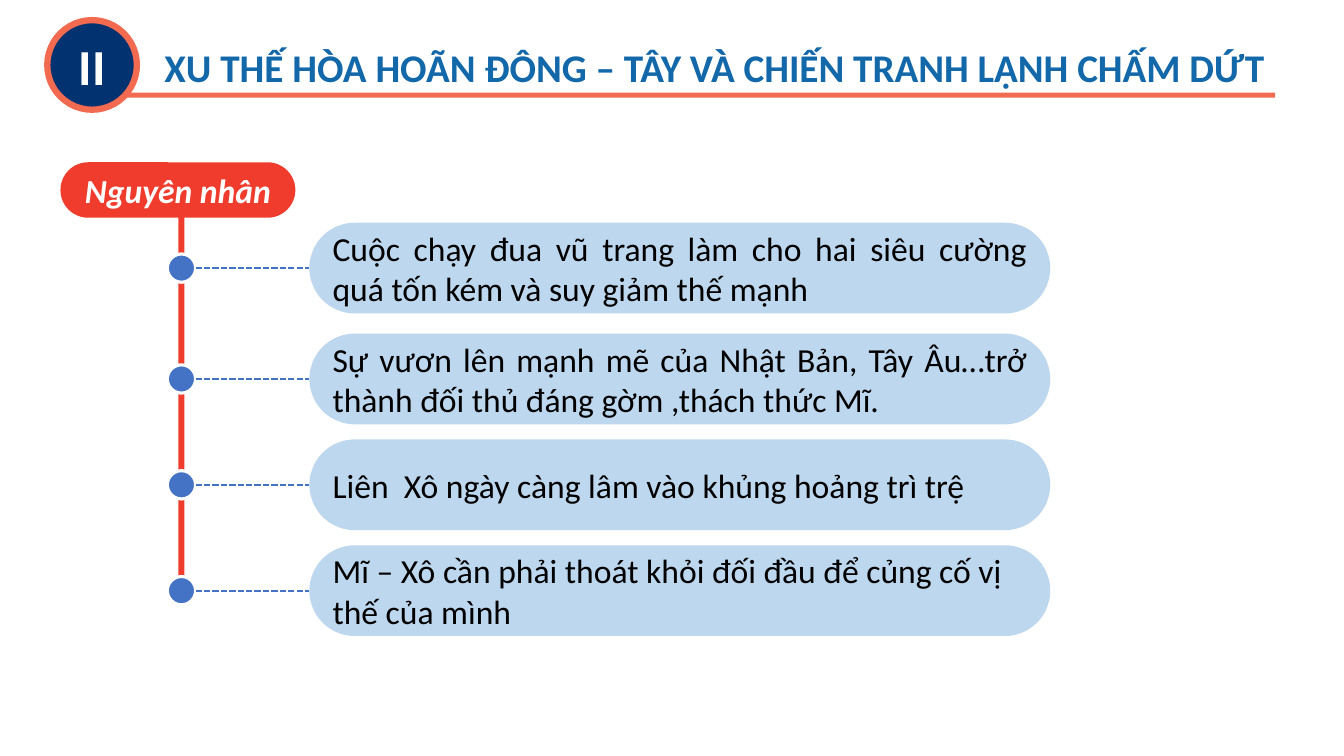
from lxml import etree
from pptx import Presentation
from pptx.dml.color import RGBColor
from pptx.enum.dml import MSO_LINE
from pptx.enum.shapes import MSO_CONNECTOR, MSO_SHAPE
from pptx.enum.text import MSO_ANCHOR, MSO_AUTO_SIZE, PP_ALIGN
from pptx.oxml.ns import qn
from pptx.util import Pt

OVAL, RECT, PILL = MSO_SHAPE.OVAL, MSO_SHAPE.RECTANGLE, MSO_SHAPE.ROUNDED_RECTANGLE
LEFT, CENTER, JUSTIFY = PP_ALIGN.LEFT, PP_ALIGN.CENTER, PP_ALIGN.JUSTIFY
LEFT_SIDE = 1
FONT = "Calibri"
COLORS = {
    "title": "1368AA", "navy": "033270", "coral": "F26A4F", "red": "EF3C2D",
    "pale": "BDD7EE", "blue": "4472C4", "white": "FFFFFF", "black": "000000",
}

# Each cause: top of its pill, alignment, wording
CAUSES = [
    (159.1, JUSTIFY, "Cuộc chạy đua vũ trang làm cho hai siêu cường quá tốn kém và suy giảm thế mạnh"),
    (238.3, JUSTIFY, "Sự vươn lên mạnh mẽ của Nhật Bản, Tây Âu…trở thành đối thủ đáng gờm ,thách thức Mĩ."),
    (313.9, JUSTIFY, "Liên  Xô ngày càng lâm vào khủng hoảng trì trệ"),
    (389.5, LEFT, "Mĩ – Xô cần phải thoát khỏi đối đầu để củng cố vị thế của mình"),
]
CAUSE_LEFT, CAUSE_WIDTH, CAUSE_HEIGHT = 221, 529.2, 64.8
DOT_LEFT, DOT_SIZE = 119.5, 20.2


def rgb(color):
    return RGBColor.from_string(COLORS[color])


def write(shape, text, size=24, color="black", align=CENTER, bold=False,
          italic=False, anchor=MSO_ANCHOR.MIDDLE):
    frame = shape.text_frame
    frame.word_wrap = True
    frame.vertical_anchor = anchor
    paragraph = frame.paragraphs[0]
    paragraph.alignment = align
    run = paragraph.add_run()
    run.text = text
    run.font.name = FONT
    run.font.size = Pt(size)
    run.font.bold = bold
    run.font.italic = italic
    run.font.color.rgb = rgb(color)


def add_block(slide, kind, left, top, width, height, fill, outline=None, weight=0):
    block = slide.shapes.add_shape(kind, Pt(left), Pt(top), Pt(width), Pt(height))
    block.shadow.inherit = False
    block.fill.solid()
    block.fill.fore_color.rgb = rgb(fill)
    if outline:
        block.line.color.rgb = rgb(outline)
        block.line.width = Pt(weight)
    else:
        block.line.fill.background()
    if kind == PILL:
        block.adjustments[0] = 0.5
    return block


def add_branch(slide, start_x, y, cause):
    branch = slide.shapes.add_connector(
        MSO_CONNECTOR.STRAIGHT, Pt(start_x), Pt(y), Pt(CAUSE_LEFT), Pt(y))
    branch.end_connect(cause, LEFT_SIDE)
    branch.line.color.rgb = rgb("blue")
    branch.line.width = Pt(1.5)
    branch.line.dash_style = MSO_LINE.SQUARE_DOT
    etree.SubElement(branch._element.spPr, qn("a:effectLst"))


def add_header(slide):
    title = slide.shapes.add_textbox(Pt(103), Pt(27.4), Pt(814.3), Pt(41.2))
    write(title, "XU THẾ HÒA HOÃN ĐÔNG – TÂY VÀ CHIẾN TRANH LẠNH CHẤM DỨT",
          size=28, color="title", bold=True, anchor=MSO_ANCHOR.TOP)
    title.text_frame.auto_size = MSO_AUTO_SIZE.SHAPE_TO_FIT_TEXT
    badge = add_block(slide, OVAL, 33.8, 14.4, 64, 64, "navy", "coral", 4.5)
    write(badge, "II", size=36, color="white", bold=True)
    add_block(slide, RECT, 88.6, 66.2, 822.2, 3.6, "coral")


def add_causes(slide):
    heading = add_block(slide, PILL, 43.2, 115.9, 167.8, 39.6, "red")
    write(heading, "Nguyên nhân", color="white", bold=True, italic=True)

    # Pills with the wording
    pills = []
    for top, align, text in CAUSES:
        pill = add_block(slide, PILL, CAUSE_LEFT, top, CAUSE_WIDTH, CAUSE_HEIGHT, "pale")
        write(pill, text, align=align)
        pills.append(pill)

    # Trunk, then a dot and a dashed branch for each pill
    add_block(slide, RECT, 127.4, 154.8, 4.3, 269.3, "red")
    for (top, _, _), pill in zip(CAUSES, pills):
        middle = top + CAUSE_HEIGHT / 2
        add_block(slide, OVAL, DOT_LEFT, middle - DOT_SIZE / 2, DOT_SIZE, DOT_SIZE,
                  "blue", "white", 2.25)
        add_branch(slide, DOT_LEFT + DOT_SIZE, middle, pill)


def main():
    deck = Presentation()
    deck.slide_width, deck.slide_height = Pt(960), Pt(540)
    slide = deck.slides.add_slide(deck.slide_layouts[6])
    add_header(slide)
    add_causes(slide)
    deck.save("out.pptx")


if __name__ == "__main__":
    main()
